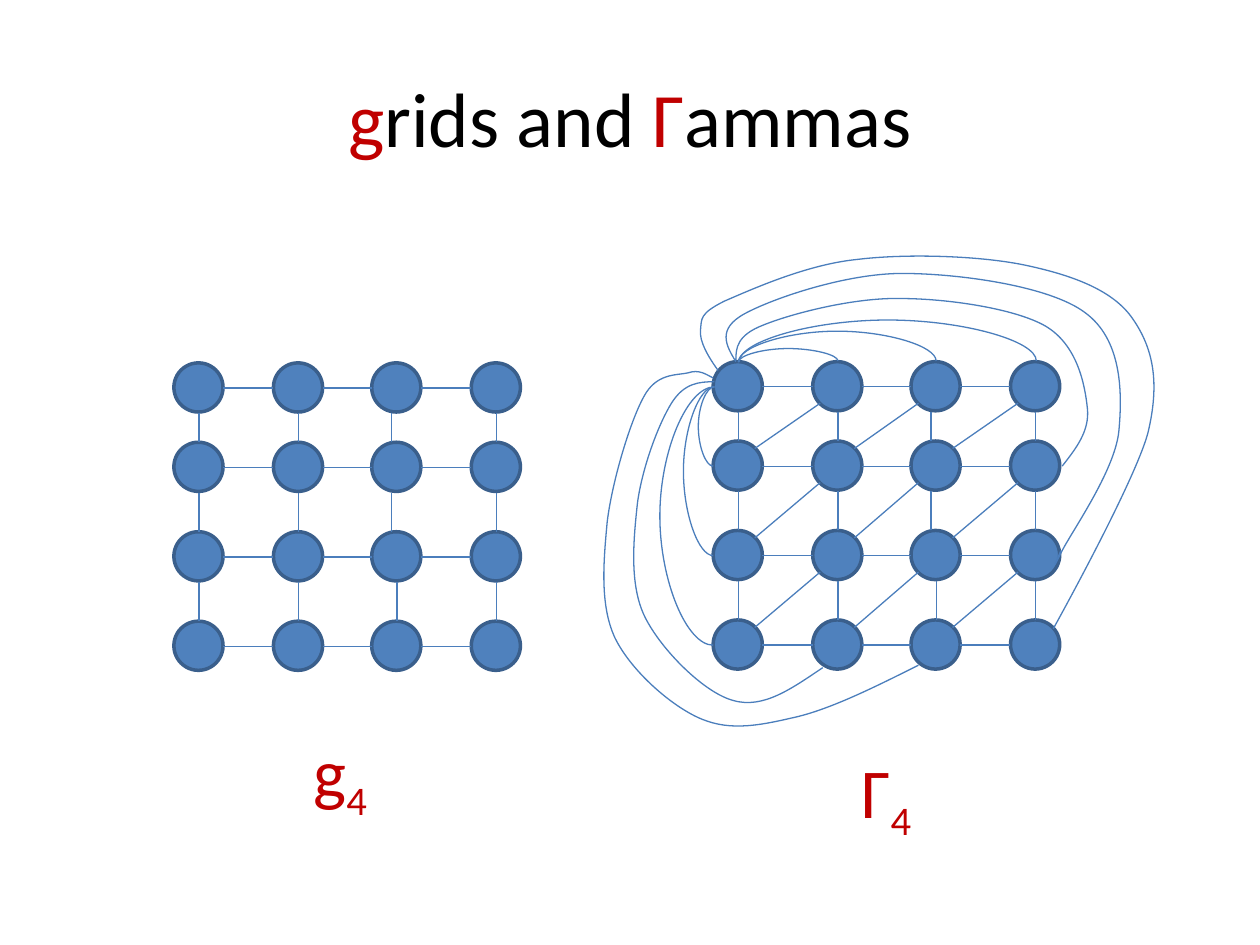
from lxml.etree import SubElement
from pptx import Presentation
from pptx.dml.color import RGBColor
from pptx.enum.shapes import MSO_CONNECTOR as Link, MSO_SHAPE as Preset
from pptx.enum.text import MSO_ANCHOR as Anchor, MSO_AUTO_SIZE as AutoSize, PP_ALIGN as Align
from pptx.oxml.ns import qn
from pptx.util import Pt

PX = 9144  # EMU per px, 100 px to the inch
NODE, HALF = 39, 20
COLUMNS = (0, 79, 157, 236)
ROWS = (0, 63, 134, 205)
RED, BLACK, BLUE, NODE_EDGE, EDGE = "C00000", "000000", "4F81BD", "3A5F8C", "4B7EBC"

# Outer edges of the Gamma graph: a start, then three Bezier points per section
OUTER_EDGES = [
    [(18, -1), (18, -11), (19, -21), (40, -29), (62, -38), (112, -51), (149, -50),
     (186, -50), (240, -42), (264, -28), (289, -13), (295, 18), (297, 37),
     (299, 55), (288, 69), (277, 83)],
    [(18, 0), (10, -13), (3, -26), (25, -38), (47, -50), (105, -70), (150, -70),
     (195, -70), (267, -60), (295, -39), (324, -18), (325, 23), (322, 55),
     (319, 87), (283, 137), (276, 152), (268, 168), (272, 159), (276, 150)],
    [(4, 7), (-4, -4), (-11, -16), (-10, -25), (-9, -34), (-11, -38), (9, -48),
     (30, -57), (74, -77), (114, -81), (154, -86), (214, -84), (250, -76),
     (287, -68), (318, -56), (333, -34), (349, -11), (355, 16), (345, 57),
     (334, 97), (270, 212), (270, 212)],
    [(1, 16), (-11, 16), (-23, 17), (-33, 33), (-43, 49), (-56, 83), (-60, 112),
     (-63, 140), (-67, 177), (-54, 203), (-41, 229), (-7, 263), (16, 269),
     (40, 276), (63, 259), (87, 243)],
    [(0, 13), (-6, 10), (-11, 6), (-20, 9), (-29, 11), (-45, 9), (-55, 28),
     (-66, 48), (-80, 95), (-84, 127), (-87, 159), (-90, 193), (-78, 219),
     (-66, 244), (-36, 271), (-13, 282), (10, 293), (32, 290), (62, 283),
     (91, 277), (127, 259), (163, 241)],
]


def emu(*lengths):
    return [int(length * PX) for length in lengths]


def color(hex_string):
    return RGBColor.from_string(hex_string)


def style_line(shape, hex_string, width):
    shape.line.color.rgb = color(hex_string)
    shape.line.width = Pt(width)


def add_link(shapes, x1, y1, x2, y2, kind=Link.STRAIGHT):
    connector = shapes.add_connector(kind, *emu(x1, y1, x2, y2))
    style_line(connector, EDGE, 0.75)
    SubElement(connector._element.spPr, qn("a:effectLst"))
    return connector


def add_bow(shapes, x1, y1, x2, y2, degrees, bulge):
    """Curved connector, one px wide before it is turned, bulging by px."""
    connector = add_link(shapes, x1, y1, x2, y2, Link.CURVE)
    properties = connector._element.spPr
    properties.find(qn("a:xfrm")).set("rot", str(degrees * 60000))
    adjustments = properties.find(qn("a:prstGeom")).find(qn("a:avLst"))
    SubElement(adjustments, qn("a:gd"), name="adj1", fmla=f"val {bulge * 100000}")


def add_curve(shapes, points):
    """Freeform whose points are joined by cubic sections."""
    builder = shapes.build_freeform(*points[0], scale=PX)
    builder.add_line_segments(points[1:], close=False)
    shape = builder.convert_to_shape()
    shape.shadow.inherit = False
    shape.fill.background()
    style_line(shape, EDGE, 0.75)
    outline = next(shape._element.iter(qn("a:path")))
    segments = outline.findall(qn("a:lnTo"))
    for start in range(0, len(segments), 3):
        cubic = SubElement(outline, qn("a:cubicBezTo"))
        for segment in segments[start:start + 3]:
            cubic.append(segment[0])
            outline.remove(segment)


def add_text(slide, box, size, runs):
    text_box = slide.shapes.add_textbox(*emu(*box))
    paragraph = text_box.text_frame.paragraphs[0]
    paragraph.font.name, paragraph.font.size = "Calibri", Pt(size)
    for text, hex_string in runs:
        run = paragraph.add_run()
        run.text = text
        run.font.color.rgb = color(hex_string)
    return text_box.text_frame, paragraph


def add_title(slide, box):
    frame, paragraph = add_text(slide, box, 44, [
        ("g", RED), ("rids and ", BLACK), ("Γ", RED), ("ammas", BLACK)])
    frame.word_wrap = True
    frame.vertical_anchor = Anchor.MIDDLE
    paragraph.alignment = Align.CENTER


def add_label(slide, box, letter):
    frame, paragraph = add_text(slide, box, 40, [(letter, RED), ("4", RED)])
    frame.word_wrap = False
    frame.auto_size = AutoSize.SHAPE_TO_FIT_TEXT
    paragraph.runs[1]._r.get_or_add_rPr().set("baseline", "-25000")


def add_grid(slide, left, top):
    shapes = slide.shapes.add_group_shape().shapes
    xs = [left + column for column in COLUMNS]
    ys = [top + row for row in ROWS]
    for y in ys:
        for x in xs:
            node = shapes.add_shape(Preset.OVAL, *emu(x, y, NODE, NODE))
            node.shadow.inherit = False
            node.fill.solid()
            node.fill.fore_color.rgb = color(BLUE)
            style_line(node, NODE_EDGE, 2)
        for x, following in zip(xs, xs[1:]):
            add_link(shapes, x + NODE, y + HALF, following, y + HALF)
    for column, x in enumerate(xs):
        for row, (y, below) in enumerate(zip(ys, ys[1:])):
            # The upper links of the third column sit slightly left of centre
            middle = x + HALF - (4 if column == 2 and row < 2 else 0)
            add_link(shapes, middle, below, middle, y + NODE + 1)
    return shapes


def add_gamma(slide, left, top):
    shapes = add_grid(slide, left, top)
    # Diagonals
    for row, below in zip(ROWS, ROWS[1:]):
        for column, following in zip(COLUMNS, COLUMNS[1:]):
            add_link(shapes, left + column + 33, top + below + 6,
                     left + following + 6, top + row + 33)
    # Bows from the corner node along the top row and the left column
    for span, bulge in zip(COLUMNS[1:], (11, 25, 34)):
        x = left + HALF + span // 2
        add_bow(shapes, x + 1, top + span / 2, x, top - span / 2, 90, bulge)
    for span, bulge in zip(ROWS[1:], (13, 25, 44)):
        add_bow(shapes, left, top + HALF + span, left + 1, top + HALF, 180, bulge)
    # Bows from the corner node around the outside
    for points in OUTER_EDGES:
        add_curve(shapes, [(left + x, top + y) for x, y in points])


def main():
    presentation = Presentation()
    presentation.slide_width, presentation.slide_height = emu(1000, 750)
    slide = presentation.slides.add_slide(presentation.slide_layouts[6])
    add_title(slide, (50, 30, 900, 125))
    add_grid(slide, 138, 288)
    add_gamma(slide, 566, 287)
    add_label(slide, (239, 573, 66, 77), "g")
    add_label(slide, (674, 589, 62, 77), "Γ")
    presentation.save("out.pptx")


if __name__ == "__main__":
    main()
